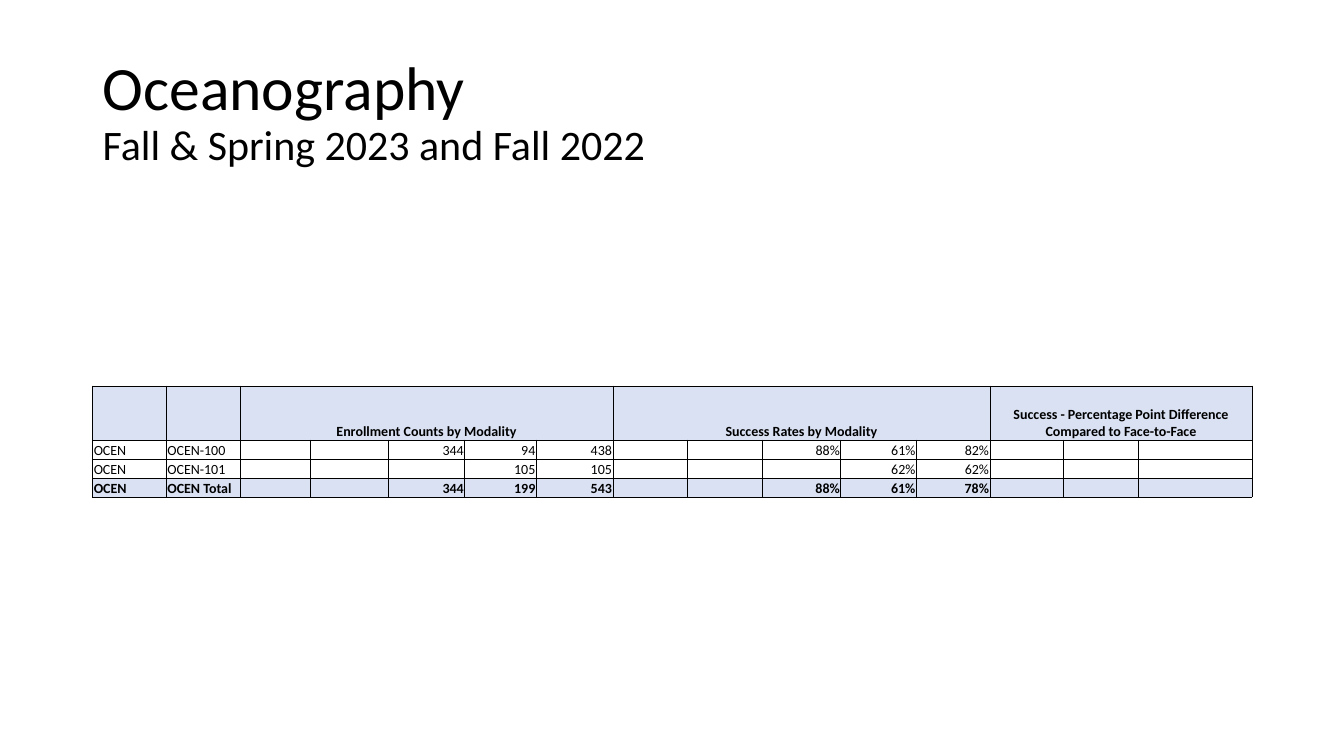
"""Build the Oceanography enrollment and success slide."""
import pptx
import pptx.util
import pptx.dml.color
import pptx.enum.text
import pptx.oxml.ns
from lxml import etree

Inches = pptx.util.Inches
Pt = pptx.util.Pt
ALIGN = pptx.enum.text.PP_ALIGN
ANCHOR = pptx.enum.text.MSO_ANCHOR
FONT = "Calibri"
COLORS = {"ink": "000000", "band": "D9E1F2"}
WIDTHS = [0.73, 0.73, 0.7, 0.77, 0.76, 0.71, 0.76, 0.74,
          0.74, 0.78, 0.75, 0.73, 0.73, 0.74, 1.13]
HEIGHTS = [0.54, 0.19, 0.19, 0.19]
GROUPS = [
    (2, 6, "Enrollment Counts by Modality"),
    (7, 11, "Success Rates by Modality"),
    (12, 14, "Success - Percentage Point Difference Compared to Face-to-Face"),
]
ROWS = [
    {0: "OCEN", 1: "OCEN-100", 4: "344", 5: "94", 6: "438",
     9: "88%", 10: "61%", 11: "82%"},
    {0: "OCEN", 1: "OCEN-101", 5: "105", 6: "105", 10: "62%", 11: "62%"},
    {0: "OCEN", 1: "OCEN Total", 4: "344", 5: "199", 6: "543",
     9: "88%", 10: "61%", 11: "78%"},
]


def color(name):
    """Return a named colour."""
    return pptx.dml.color.RGBColor.from_string(COLORS[name])


def write(para, text, size, bold=False):
    """Add one styled run to a paragraph."""
    run = para.add_run()
    run.text = text
    run.font.name = FONT
    run.font.size = Pt(size)
    run.font.bold = bold
    run.font.color.rgb = color("ink")


def child(node, tag, **attrs):
    """Add a drawing element below a node."""
    return etree.SubElement(node, pptx.oxml.ns.qn(tag), **attrs)


def style(cell, band):
    """Give a cell its borders, fill, margins and empty text size."""
    props = cell._tc.get_or_add_tcPr()
    for side in "LRTB":
        line = child(props, "a:ln" + side, w=str(Pt(0.5)))
        child(child(line, "a:solidFill"), "a:srgbClr", val=COLORS["ink"])
    if band:
        cell.fill.solid()
        cell.fill.fore_color.rgb = color("band")
    else:
        cell.fill.background()
    cell.margin_left = cell.margin_right = cell.margin_top = Inches(0.01)
    cell.margin_bottom = 0
    cell.vertical_anchor = ANCHOR.BOTTOM
    child(cell.text_frame.paragraphs[0]._p, "a:endParaRPr", sz="1000")


def fill(cell, text, align, bold):
    """Write aligned text in a cell."""
    para = cell.text_frame.paragraphs[0]
    para.alignment = align
    write(para, text, 10, bold)


def title(slide, left, top, width, height):
    """Place the heading and its line of terms."""
    box = slide.shapes.add_textbox(
        Inches(left), Inches(top), Inches(width), Inches(height))
    frame = box.text_frame
    frame.word_wrap = True
    frame.vertical_anchor = ANCHOR.MIDDLE
    para = frame.paragraphs[0]
    para.line_spacing = 0.9
    write(para, "Oceanography", 44)
    para.add_line_break()
    write(para, "Fall & Spring 2023 and Fall 2022", 30)


def grid(slide, left, top, width, height):
    """Place the table of counts and rates."""
    table = slide.shapes.add_table(
        len(HEIGHTS), len(WIDTHS), Inches(left), Inches(top),
        Inches(width), Inches(height)).table
    table.first_row = table.horz_banding = False
    for col, size in zip(table.columns, WIDTHS):
        col.width = Inches(size * width / sum(WIDTHS))
    last = len(HEIGHTS) - 1
    for num, size in enumerate(HEIGHTS):
        table.rows[num].height = Inches(size * height / sum(HEIGHTS))
        for cell in table.rows[num].cells:
            style(cell, num in (0, last))
    for start, end, text in GROUPS:
        table.cell(0, start).merge(table.cell(0, end))
        fill(table.cell(0, start), text, ALIGN.CENTER, True)
    for num, row in enumerate(ROWS, 1):
        for col, text in row.items():
            align = ALIGN.LEFT if col < 2 else ALIGN.RIGHT
            fill(table.cell(num, col), text, align, num == last)


def main():
    """Build and save the deck."""
    deck = pptx.Presentation()
    deck.slide_width = Inches(13.33)
    deck.slide_height = Inches(7.5)
    slide = deck.slides.add_slide(deck.slide_layouts[6])
    title(slide, 0.92, 0.4, 11.5, 1.45)
    grid(slide, 0.92, 3.83, 11.5, 1.1)
    deck.save("out.pptx")


if __name__ == "__main__":
    main()
